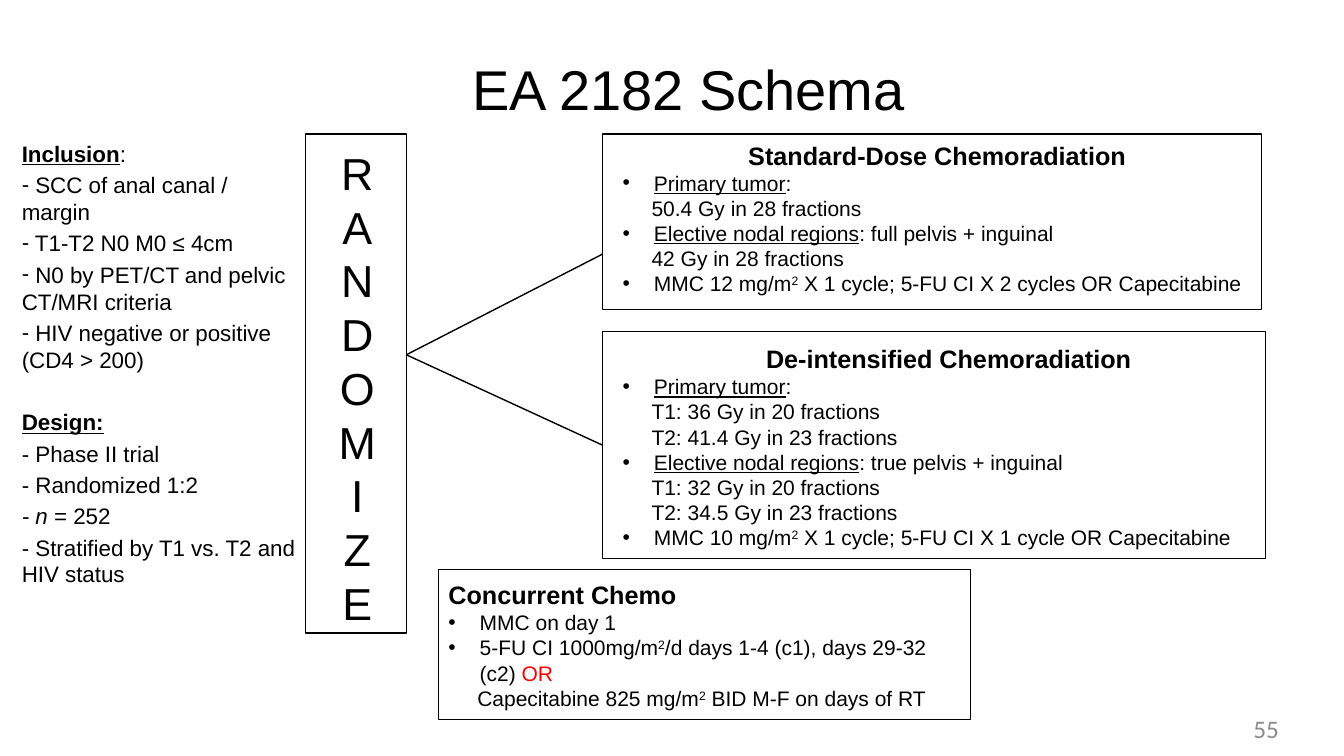
from lxml import etree
from pptx import Presentation
from pptx import util as u
from pptx.dml.color import RGBColor
from pptx.enum import shapes, text
from pptx.oxml.ns import qn

BLACK = RGBColor(0, 0, 0)
RED = RGBColor(255, 0, 0)
GREY = RGBColor(0x8C, 0x8C, 0x8C)
INDENT = 0.79
DETAIL_INDENT = 0.73

INCLUSION = [
    " SCC of anal canal / margin",
    " T1-T2 N0 M0 ≤ 4cm",
    " N0 by PET/CT and pelvic CT/MRI criteria",
    " HIV negative or positive (CD4 > 200)",
]
DESIGN = [
    [("- Phase II trial", "")],
    [("- Randomized 1:2", "")],
    [("- n", "i"), (" = 252", "")],
    [("- Stratified by T1 vs. T2 and HIV status", "")],
]
# Each row: bulleted or not, then runs of (words, style letters)
STANDARD = [
    (True, [("Primary tumor", "u"), (":", "")]),
    (False, [("50.4 Gy in 28 fractions", "")]),
    (True, [("Elective nodal regions", "u"), (": full pelvis + inguinal", "")]),
    (False, [("42 Gy in 28 fractions", "")]),
    (True, [("MMC 12 mg/m", ""), ("2", "^"),
            (" X 1 cycle; 5-FU CI X 2 cycles OR Capecitabine", "")]),
]
DEINTENSIFIED = [
    (True, [("Primary tumor", "u"), (":", "")]),
    (False, [("T1: 36 Gy in 20 fractions", "")]),
    (False, [("T2: 41.4 Gy in 23 fractions", "")]),
    (True, [("Elective nodal regions", "u"), (": true pelvis + inguinal", "")]),
    (False, [("T1: 32 Gy in 20 fractions", "")]),
    (False, [("T2: 34.5 Gy in 23 fractions", "")]),
    (True, [("MMC 10 mg/m", ""), ("2", "^"),
            (" X 1 cycle; 5-FU CI X 1 cycle OR Capecitabine", "")]),
]
CONCURRENT = [
    (True, [("MMC on day 1", "")]),
    (True, [("5-FU CI 1000mg/m", ""), ("2", "^"),
            ("/d days 1-4 (c1), days 29-32 (c2) ", ""), ("OR", "r")]),
    (False, [("Capecitabine 825 mg/m", ""), ("2", "^"),
             (" BID M-F on days of RT", "")]),
]


def add_text_box(page, left, top, width, height):
    box = page.shapes.add_textbox(u.Cm(left), u.Cm(top), u.Cm(width), u.Cm(height))
    box.text_frame.word_wrap = True
    return box.text_frame


def add_para(frame, spans, size, align=text.PP_ALIGN.LEFT, before=0,
             bullet=None, indent=0, font="Arial", color=BLACK):
    """Style letters: b bold, i italic, u underline, ^ superscript, r red."""
    first = frame.paragraphs[0]
    para = frame.add_paragraph() if first.runs else first
    para.alignment = align
    if before:
        para.space_before = u.Pt(before)
    properties = para._p.get_or_add_pPr()
    properties.set("marL", str(u.Cm(indent)))
    if bullet:
        properties.set("indent", str(-u.Cm(indent)))
        etree.SubElement(properties, qn("a:buFont")).set("typeface", "Arial")
        etree.SubElement(properties, qn("a:buChar")).set("char", bullet)
    for words, style in spans:
        span = para.add_run()
        span.text = words
        span.font.name = font
        span.font.size = u.Pt(size)
        span.font.bold = "b" in style
        span.font.italic = "i" in style
        span.font.underline = "u" in style
        span.font.color.rgb = RED if "r" in style else color
        if "^" in style:
            span.font._element.set("baseline", "30000")


def add_frame(page, left, top, width, height):
    frame = page.shapes.add_shape(shapes.MSO_SHAPE.RECTANGLE, u.Cm(left),
                                  u.Cm(top), u.Cm(width), u.Cm(height))
    frame.shadow.inherit = False
    frame.fill.background()
    frame.line.color.rgb = BLACK
    frame.line.width = u.Pt(1)
    return frame


def add_arm_text(page, place, heading, rows, align=text.PP_ALIGN.CENTER):
    frame = add_text_box(page, *place)
    add_para(frame, [(heading, "b")], 18, align)
    for bulleted, spans in rows:
        add_para(frame, spans, 15, bullet="•" if bulleted else None,
                 indent=INDENT if bulleted else DETAIL_INDENT)


def add_branch(page, end_y):
    branch = page.shapes.add_connector(
        shapes.MSO_CONNECTOR.STRAIGHT, u.Cm(10.24), u.Cm(8.94), u.Cm(15.19), u.Cm(end_y))
    branch.line.color.rgb = BLACK
    branch.line.width = u.Pt(1)
    etree.SubElement(branch._element.spPr, qn("a:effectLst"))
    return branch


def add_criteria(page):
    frame = add_text_box(page, 0.3, 3.4, 7.54, 12.7)
    add_para(frame, [("Inclusion", "bu"), (":", "")], 16)
    for item in INCLUSION:
        add_para(frame, [(item, "")], 16, before=3.2, bullet="-")
    add_para(frame, [("Design:", "bu")], 16, before=25.4)
    for spans in DESIGN:
        add_para(frame, spans, 16, before=3.2)


def add_randomize(page):
    add_frame(page, 7.7, 3.38, 2.54, 12.57)
    frame = add_text_box(page, 7.9, 3.48, 2.21, 12.57)
    frame.vertical_anchor = text.MSO_ANCHOR.MIDDLE
    for letter in "RANDOMIZE":
        add_para(frame, [(letter, "")], 32, text.PP_ALIGN.CENTER)


def main():
    deck = Presentation()
    deck.slide_width, deck.slide_height = u.Cm(33.87), u.Cm(19.05)
    page = deck.slides.add_slide(deck.slide_layouts[6])

    number = add_text_box(page, 31.34, 17.86, 1.68, 1.07)
    add_para(number, [("55", "")], 18, font="Calibri", color=GREY)
    title = add_text_box(page, 0.28, 1.24, 34.14, 3.18)
    add_para(title, [("EA 2182 Schema", "")], 40, text.PP_ALIGN.CENTER)

    add_criteria(page)
    add_randomize(page)

    add_frame(page, 15.19, 3.38, 16.61, 4.42)
    add_arm_text(page, (15.44, 3.4, 16.36, 6.4),
                 "Standard-Dose Chemoradiation", STANDARD)
    add_branch(page, 6.4)

    lower_arm = add_frame(page, 15.19, 8.36, 16.71, 5.72)
    add_arm_text(page, (15.44, 8.53, 16.94, 6.15),
                 "De-intensified Chemoradiation", DEINTENSIFIED)
    add_branch(page, 11.22).end_connect(lower_arm, 1)

    add_frame(page, 11.05, 14.35, 13.41, 3.78)
    add_arm_text(page, (11.05, 14.48, 13.11, 5.13),
                 "Concurrent Chemo", CONCURRENT, text.PP_ALIGN.LEFT)

    deck.save("out.pptx")


if __name__ == "__main__":
    main()
